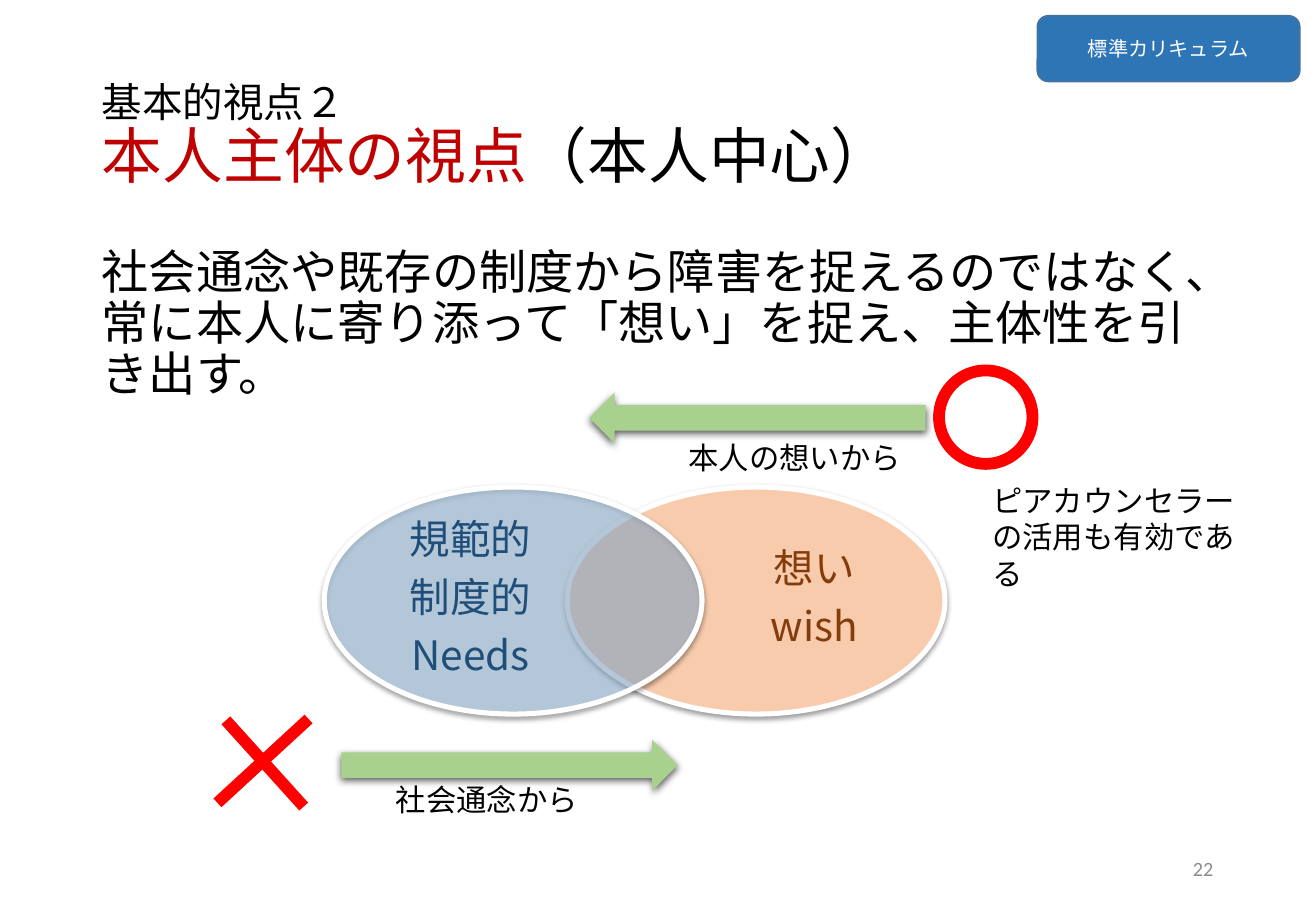
from lxml import etree
from pptx import Presentation
from pptx import util as u
from pptx.dml.color import RGBColor
from pptx.enum import shapes, text
from pptx.oxml.ns import qn

COLORS = {
    "black": "000000", "white": "FFFFFF", "red": "FF0000", "crimson": "C00000",
    "gray": "8C8C8C", "peach": "F8CBAD", "brown": "843C0B", "sky": "9DC3E6",
    "navy": "1F4E79", "green": "A9D18E", "blue": "2E75B6", "blue_edge": "43739E",
}
CJK = "Noto Sans CJK JP"
LATIN = "Calibri"
LEFT, CENTER, RIGHT = text.PP_ALIGN.LEFT, text.PP_ALIGN.CENTER, text.PP_ALIGN.RIGHT
TOP, MIDDLE = text.MSO_ANCHOR.TOP, text.MSO_ANCHOR.MIDDLE
KIND = shapes.MSO_SHAPE


def color(name):
    return RGBColor.from_string(COLORS[name])


class SlideBuilder:
    def __init__(self, slide):
        self.slide = slide

    def fill_text(self, shape, paragraphs, align=LEFT, anchor=TOP, inset=None,
                  line_spacing=None, before=0, after=0):
        """Each paragraph is a list of (words, size, color, font) runs; None breaks the line."""
        frame = shape.text_frame
        frame.word_wrap = True
        frame.vertical_anchor = anchor
        if inset is not None:
            frame.margin_left = frame.margin_right = u.Pt(inset)
            frame.margin_top = frame.margin_bottom = u.Pt(inset)
        for index, runs in enumerate(paragraphs):
            paragraph = frame.add_paragraph() if index else frame.paragraphs[0]
            paragraph.alignment = align
            paragraph.line_spacing = line_spacing
            paragraph.space_before, paragraph.space_after = u.Pt(before), u.Pt(after)
            for item in runs:
                if item is None:
                    paragraph.add_line_break()
                    continue
                words, size, ink, font = item
                run = paragraph.add_run()
                run.text = words
                run.font.size, run.font.name = u.Pt(size), font
                run.font.color.rgb = color(ink)
                if font == CJK:
                    etree.SubElement(run._r.get_or_add_rPr(), qn("a:ea"), typeface=CJK)

    def text_box(self, box, paragraphs, **style):
        shape = self.slide.shapes.add_textbox(*map(u.Pt, box))
        self.fill_text(shape, paragraphs, **style)

    def shape(self, kind, box, fill=None, line=None, width=1, alpha=None, shadow=None, rotation=0):
        shape = self.slide.shapes.add_shape(kind, *map(u.Pt, box))
        shape.rotation = rotation
        shape.shadow.inherit = False
        if fill:
            shape.fill.solid()
            shape.fill.fore_color.rgb = color(fill)
        else:
            shape.fill.background()
        if line:
            shape.line.color.rgb = color(line)
            shape.line.width = u.Pt(width)
        else:
            shape.line.fill.background()
        properties = shape._element.spPr
        if alpha:
            fill_color = properties.find(qn("a:solidFill"))[0]
            etree.SubElement(fill_color, qn("a:alpha"), val=str(alpha * 1000))
        if shadow:
            opacity, blur, distance = shadow
            outer = etree.SubElement(
                properties.find(qn("a:effectLst")), qn("a:outerShdw"), blurRad=str(u.Pt(blur)),
                dist=str(u.Pt(distance)), dir="5400000", rotWithShape="0")
            tint = etree.SubElement(outer, qn("a:srgbClr"), val=COLORS["black"])
            etree.SubElement(tint, qn("a:alpha"), val=str(opacity * 1000))
        return shape

    def line(self, start, end, ink, width):
        connector = self.slide.shapes.add_connector(
            shapes.MSO_CONNECTOR.STRAIGHT, *map(u.Pt, start + end))
        connector.line.color.rgb = color(ink)
        connector.line.width = u.Pt(width)
        etree.SubElement(connector._element.spPr, qn("a:effectLst"))


def main():
    presentation = Presentation()
    presentation.slide_width, presentation.slide_height = u.Pt(780), u.Pt(540)
    builder = SlideBuilder(presentation.slides.add_slide(presentation.slide_layouts[6]))

    # Title, message and page number
    builder.text_box((53.3, 28.8, 672.5, 104.4), [[
        ("基本的視点２", 24, "black", CJK), None,
        ("本人主体の視点", 36, "crimson", CJK),
        ("（本人中心）", 36, "black", LATIN)]], anchor=MIDDLE, line_spacing=0.9)
    builder.text_box((53.3, 144, 672.5, 67.7), [[
        ("社会通念や既存の制度から障害を捉えるのではなく、"
         "常に本人に寄り添って「想い」を捉え、主体性を引き出す。", 28, "black", LATIN)]],
        line_spacing=0.9, before=10)
    builder.text_box((550.8, 500.4, 175.5, 28.8), [[("22", 12, "gray", LATIN)]],
                     align=RIGHT, anchor=MIDDLE)

    # Overlapping ellipses: wish behind, needs in front
    for left, fill, alpha, label_box, ink, words in (
            (336.2, "peach", None, (437, 322.6, 91.4, 65.5), "brown", ("想い", "wish")),
            (192.2, "sky", 50, (234.7, 303.8, 88.6, 103), "navy", ("規範的", "制度的", "Needs"))):
        builder.shape(KIND.OVAL, (left, 288.7, 223.9, 134.6), fill, "white", 3, alpha,
                      shadow=(38, 3.1, 1.6))
        builder.text_box(label_box, [[(word, 24, ink, CJK)] for word in words], align=CENTER,
                         anchor=MIDDLE, inset=2.2, line_spacing=0.9, after=8.4)

    # Arrows with their captions
    for left, top, rotation, caption_box, caption in (
            (202.3, 438.5, 0, (227.5, 459.4, 123.1, 28.8), "社会通念から"),
            (349.2, 232.6, 180, (401, 257, 146.9, 28.8), "本人の想いから")):
        builder.shape(KIND.RIGHT_ARROW, (left, top, 199.4, 30.2), "green",
                      shadow=(63, 4.5, 1.5), rotation=rotation)
        builder.text_box(caption_box, [[(caption, 18, "black", LATIN)]])

    # Circle and cross marks
    builder.shape(KIND.OVAL, (556.6, 219.6, 55.4, 55.4), line="red", width=7)
    builder.line((133.9, 427), (180, 478.1), "red", 7)
    builder.line((128.9, 475.9), (182.9, 426.2), "red", 7)

    # Side note and curriculum badge
    builder.text_box((581, 282.2, 169.2, 51.1),
                     [[("ピアカウンセラーの活用も有効である", 18, "black", LATIN)]])
    badge = builder.shape(KIND.ROUNDED_RECTANGLE, (614.9, 9.4, 155.5, 38.9), "blue", "blue_edge")
    builder.fill_text(badge, [[("標準カリキュラム", 12, "white", LATIN)]],
                      align=CENTER, anchor=MIDDLE)

    presentation.save("out.pptx")


if __name__ == "__main__":
    main()
